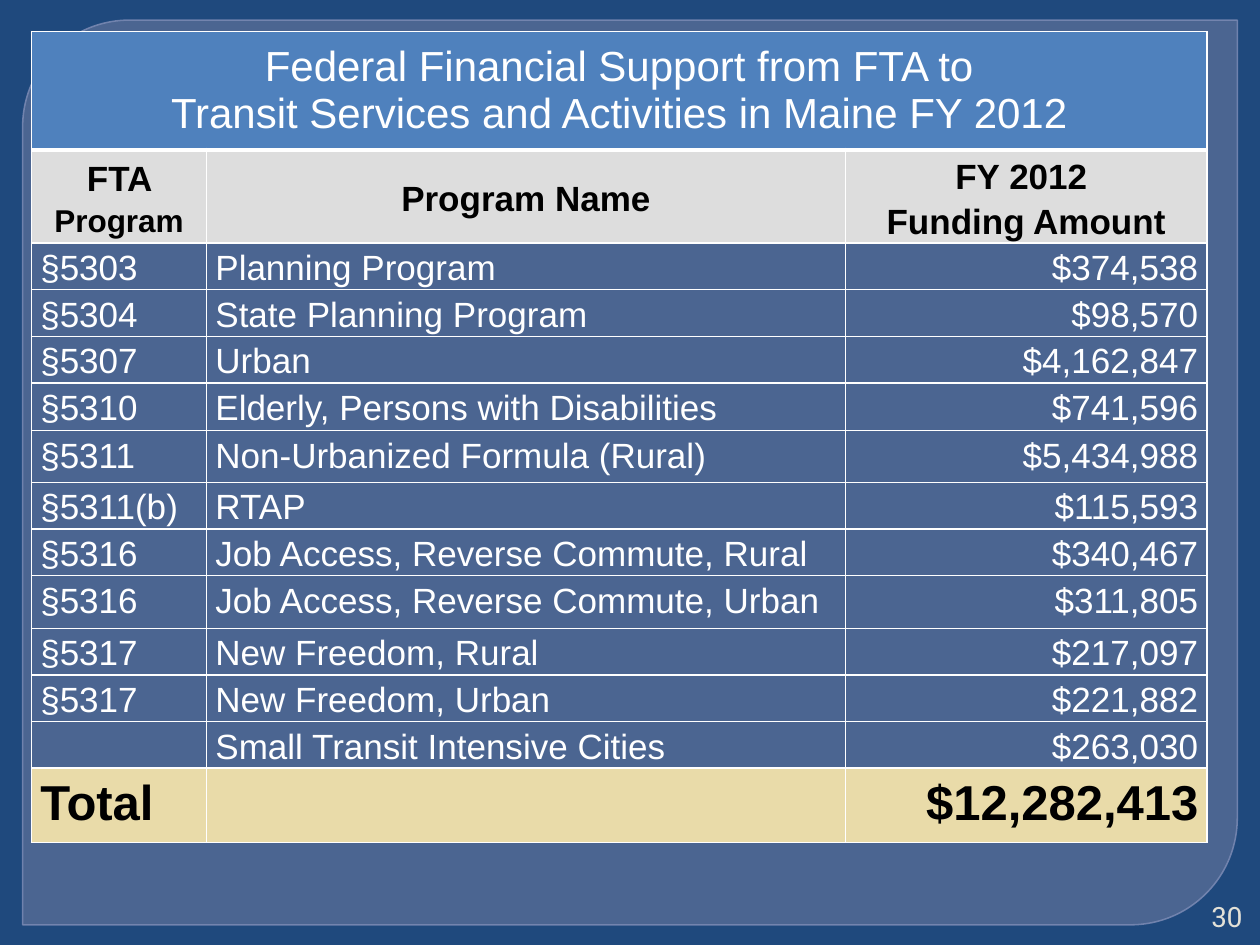
"""Build a slide with a table of federal transit funding in Maine."""
import pptx
import pptx.dml.color
import pptx.enum.shapes
import pptx.enum.text
import pptx.oxml
import pptx.oxml.ns
import pptx.util
from pptx.util import Inches

ALIGN = pptx.enum.text.PP_ALIGN
MIDDLE = pptx.enum.text.MSO_ANCHOR.MIDDLE
NS = pptx.oxml.ns.nsdecls("a")


def paint(color, code):
    color.rgb = pptx.dml.color.RGBColor.from_string(code)


def write(para, size, code, align, bold=False, face="Arial"):
    para.alignment = align
    font = para.font
    font.name, font.size, font.bold = face, pptx.util.Pt(size), bold
    paint(font.color, code)


deck = pptx.Presentation()
deck.slide_width, deck.slide_height = Inches(10), Inches(7.5)
slide = deck.slides.add_slide(deck.slide_layouts[6])
slide.background.fill.solid()
paint(slide.background.fill.fore_color, "1F497D")

panel = slide.shapes.add_shape(
    pptx.enum.shapes.MSO_SHAPE.ROUND_2_DIAG_RECTANGLE,
    Inches(0.18), Inches(0.16), Inches(9.64), Inches(7.18))
panel.adjustments[0], panel.adjustments[1] = 0.118, 0
panel.shadow.inherit = False
panel.fill.solid()
panel.line.width = pptx.util.Pt(0.87)
paint(panel.fill.fore_color, "63759D")
paint(panel.line.color, "7989B3")
for node, alpha in zip(panel.element.spPr.xpath(".//a:srgbClr"), (65000, 88000)):
    node.append(pptx.oxml.parse_xml(f'<a:alpha {NS} val="{alpha}"/>'))

rows = [
    ("Federal Financial Support from FTA to\nTransit Services and Activities in Maine FY 2012", "", ""),
    ("FTA ", "Program Name", "FY 2012 \nFunding Amount"),
    ("§5303", "Planning Program", "$374,538"),
    ("§5304", "State Planning Program", "$98,570"),
    ("§5307", "Urban", "$4,162,847"),
    ("§5310", "Elderly, Persons with Disabilities", "$741,596"),
    ("§5311", "Non-Urbanized Formula (Rural)", "$5,434,988"),
    ("§5311(b)", "RTAP", "$115,593"),
    ("§5316", "Job Access, Reverse Commute, Rural", "$340,467"),
    ("§5316", "Job Access, Reverse Commute, Urban", "$311,805"),
    ("§5317", "New Freedom, Rural", "$217,097"),
    ("§5317", "New Freedom, Urban", "$221,882"),
    ("", "Small Transit Intensive Cities", "$263,030"),
    ("Total", "", "$12,282,413"),
]
last = len(rows) - 1
sizes = {0: 24, last: 28}
fills = {0: "4F81BD", 1: "DDDDDD", last: "E9DBA9"}
heights = {0: 0.94, 1: 0.74, 5: 0.38, 6: 0.41, 9: 0.42, last: 0.59}

table = slide.shapes.add_table(len(rows), 3, Inches(0.25), Inches(0.25),
                               Inches(9.33), Inches(6.61)).table
table.first_row = table.horz_banding = False
for col, width in zip(table.columns, (1.39, 5.07, 2.87)):
    col.width = Inches(width)

for i, row in enumerate(rows):
    table.rows[i].height = Inches(heights.get(i, 0.37))
    head = i < 2
    dark = i in (1, last)
    for j, text in enumerate(row):
        cell = table.cell(i, j)
        cell.margin_left = cell.margin_right = Inches(0.07)
        cell.margin_top = cell.margin_bottom = 0
        props = cell._tc.get_or_add_tcPr()
        for side in "LRTB":
            thick = (i, side) in ((0, "B"), (1, "T"))
            props.append(pptx.oxml.parse_xml(
                f'<a:ln{side} {NS} w="{38100 if thick else 12700}"><a:solidFill>'
                f'<a:srgbClr val="FFFFFF"/></a:solidFill></a:ln{side}>'))
        if i in fills:
            cell.fill.solid()
            paint(cell.fill.fore_color, fills[i])
        else:
            cell.fill.background()
        if head:
            cell.vertical_anchor = MIDDLE
        cell.text = text
        align = ALIGN.CENTER if head else ALIGN.RIGHT if j == 2 else ALIGN.LEFT
        for para in cell.text_frame.paragraphs:
            write(para, sizes.get(i, 20), "000000" if dark else "FFFFFF", align, dark)
            if i:
                para.line_spacing = 1.15
            if not head:
                para.space_after = pptx.util.Pt(8)

table.cell(0, 0).merge(table.cell(0, 2))
label = table.cell(1, 0).text_frame.paragraphs[0].add_run()
label.text = "Program"
label.font.size = pptx.util.Pt(18)

box = slide.shapes.add_textbox(Inches(9.45), Inches(7.12), Inches(0.51), Inches(0.3))
frame = box.text_frame
frame.word_wrap = True
frame.vertical_anchor = MIDDLE
frame.text = "30"
write(frame.paragraphs[0], 16, "E3E1D7", ALIGN.RIGHT, face="Roboto Slab")

deck.save("out.pptx")
